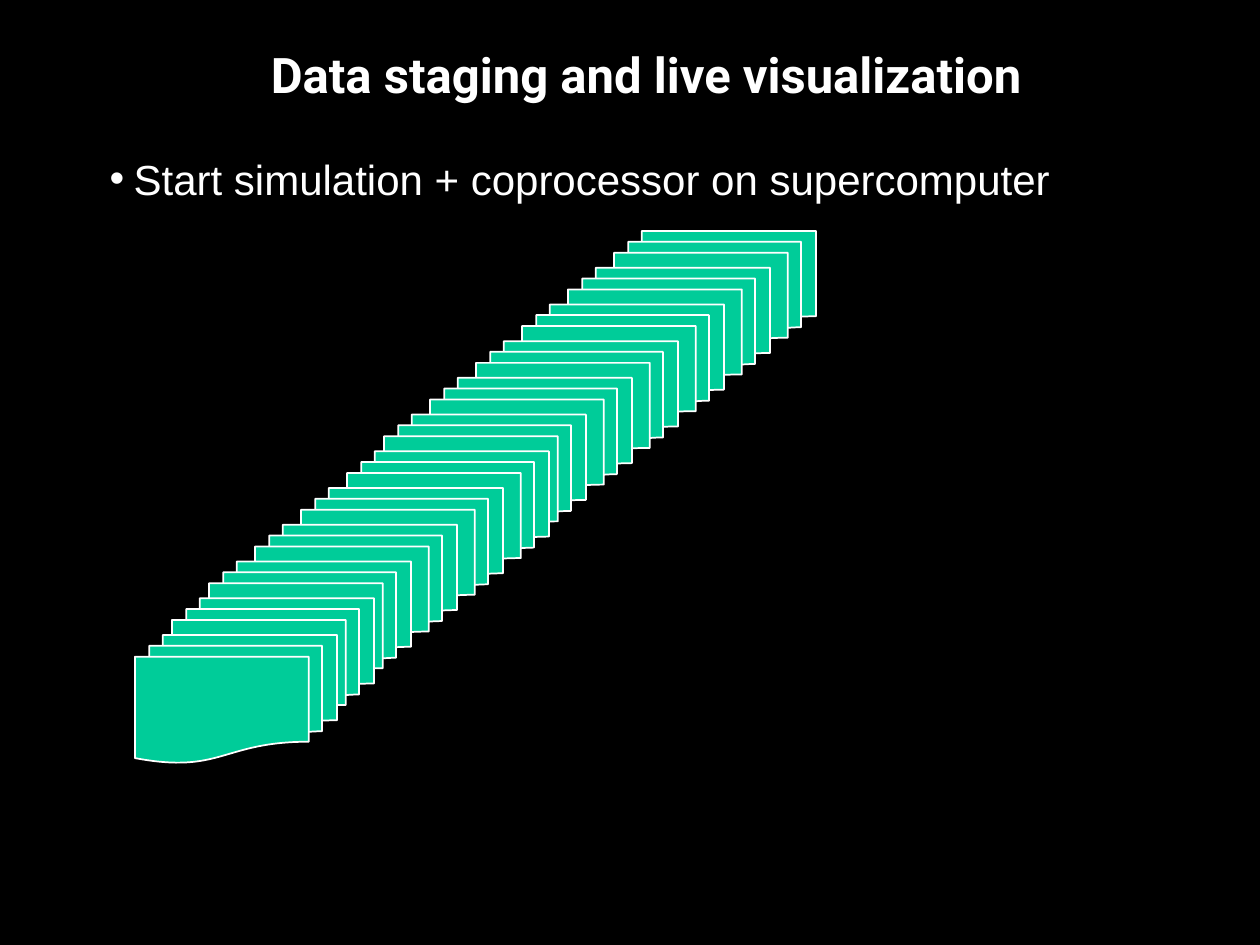
import dataclasses
import itertools

import lxml.etree
import pptx
import pptx.dml.color
import pptx.enum.shapes
import pptx.enum.text
import pptx.oxml.ns
import pptx.util


@dataclasses.dataclass(frozen=True)
class Theme:
    back: str = "000000"
    ink: str = "FFFFFF"
    sheet: str = "00CC99"
    head_font: str = "Roboto"
    list_font: str = "Arial"
    head_size: int = 28
    list_size: int = 24
    edge: int = 1


THEME = Theme()
SCALE = pptx.util.Inches(1) / 126
COUNT = 12
LEFT, TOP = 614, 231
WIDE, HIGH = 202, 128
STEP, SHORT = 46, 37
SHORT_STEPS = {6, 10, 11}
DROP = 404


def px(num):
    return pptx.util.Emu(round(num * SCALE))


def tint(code):
    return pptx.dml.color.RGBColor.from_string(code)


def place(shape, left, top, wide, high):
    shape.left, shape.top = px(left), px(top)
    shape.width, shape.height = px(wide), px(high)


def add_run(para, text, font, size, bold=False):
    run = para.add_run()
    run.text = text
    run.font.name = font
    run.font.size = pptx.util.Pt(size)
    run.font.bold = bold
    run.font.color.rgb = tint(THEME.ink)


def set_frame(shape, anchor):
    frame = shape.text_frame
    frame.word_wrap = True
    frame.auto_size = pptx.enum.text.MSO_AUTO_SIZE.NONE
    frame.vertical_anchor = anchor
    return frame.paragraphs[0]


def add_title(slide, text):
    title = slide.shapes.title
    place(title, 210, 0, 872, 147)
    para = set_frame(title, pptx.enum.text.MSO_ANCHOR.MIDDLE)
    para.alignment = pptx.enum.text.PP_ALIGN.CENTER
    add_run(para, text, THEME.head_font, THEME.head_size, True)


def add_list(slide, text):
    body = slide.placeholders[1]
    place(body, 73, 147, 1113, 756)
    para = set_frame(body, pptx.enum.text.MSO_ANCHOR.TOP)
    para.space_before = pptx.util.Pt(0)
    props = para._p.get_or_add_pPr()
    props.set("marL", str(px(48)))
    props.set("indent", str(px(-24)))
    mark = lxml.etree.SubElement(props, pptx.oxml.ns.qn("a:buChar"))
    mark.set("char", "•")
    add_run(para, text, THEME.list_font, THEME.list_size)


def add_sheets(group, left, top):
    kind = pptx.enum.shapes.MSO_SHAPE.FLOWCHART_MULTIDOCUMENT
    shape = group.shapes.add_shape(kind, px(left), px(top), px(WIDE), px(HIGH))
    shape.shadow.inherit = False
    shape.fill.solid()
    shape.fill.fore_color.rgb = tint(THEME.sheet)
    shape.line.color.rgb = tint(THEME.ink)
    shape.line.width = pptx.util.Pt(THEME.edge)


def add_stack(slide):
    group = slide.shapes.add_group_shape()
    moves = [-SHORT if i in SHORT_STEPS else -STEP for i in range(1, COUNT)]
    for i, left in enumerate(itertools.accumulate(moves, initial=LEFT)):
        add_sheets(group, left, TOP + i * DROP / (COUNT - 1))


def main():
    deck = pptx.Presentation()
    deck.slide_width, deck.slide_height = px(1260), px(945)
    slide = deck.slides.add_slide(deck.slide_layouts[1])
    slide.background.fill.solid()
    slide.background.fill.fore_color.rgb = tint(THEME.back)
    add_title(slide, "Data staging and live visualization")
    add_list(slide, "Start simulation + coprocessor on supercomputer")
    add_stack(slide)
    deck.save("out.pptx")


if __name__ == "__main__":
    main()
